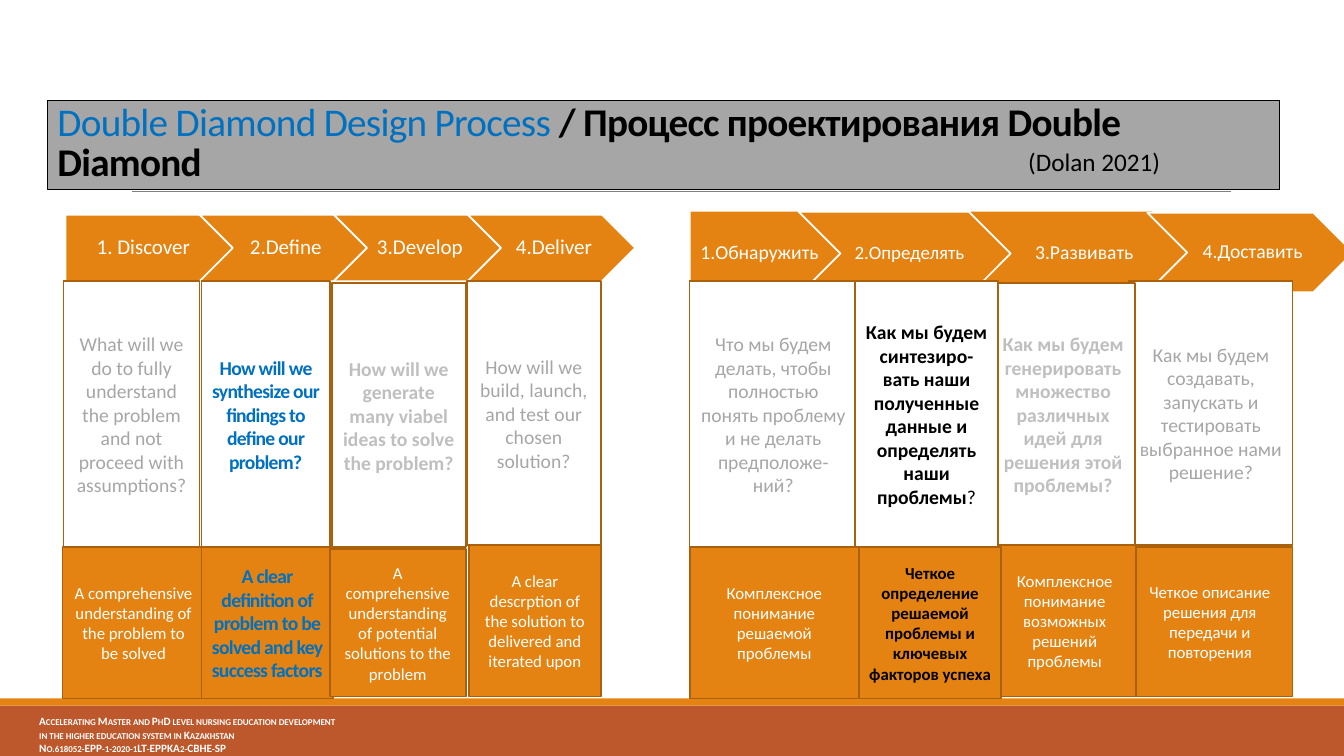
"""Build the bilingual Double Diamond design process slide."""
import dataclasses

import lxml.etree
import pptx
import pptx.dml.color
import pptx.enum.shapes
import pptx.enum.text
import pptx.oxml.ns
import pptx.util


@dataclasses.dataclass(frozen=True)
class Theme:
    font: str = "Calibri"
    orange: str = "E48312"
    brown: str = "A9610D"
    rust: str = "BD582C"
    blue: str = "0070C0"
    black: str = "000000"
    white: str = "FFFFFF"
    rule: str = "808080"
    grey: str = "A6A6A6"
    pale: str = "BFBFBF"
    title: float = 28
    source: float = 18
    step: float = 15
    body: float = 14
    tight: float = 13.5
    outcome: float = 12
    footer: float = 8


theme = Theme()
rgb = pptx.dml.color.RGBColor.from_string
forms = pptx.enum.shapes.MSO_SHAPE
align = pptx.enum.text.PP_ALIGN
anchor = pptx.enum.text.MSO_ANCHOR
cell = pptx.util.Inches(0.1)

deck = pptx.Presentation()
deck.slide_width = pptx.util.Inches(13.33)
deck.slide_height = pptx.util.Inches(7.5)
slide = deck.slides.add_slide(deck.slide_layouts[5])


def write(paragraph, text, size, color, bold=False, spacing=None, caps=None,
          alignment=align.CENTER, leading=None):
    paragraph.alignment = alignment
    paragraph.line_spacing = leading
    run = paragraph.add_run()
    run.text = text
    run.font.name = theme.font
    run.font.size = pptx.util.Pt(size)
    run.font.bold = bold
    run.font.color.rgb = rgb(color)
    for key, value in (("spc", spacing), ("cap", caps)):
        if value:
            run.font._element.set(key, value)


def block(form, column, row, columns, rows, fill, outline=None):
    shape = slide.shapes.add_shape(form, *(int(n * cell) for n in (column, row, columns, rows)))
    shape.shadow.inherit = False
    shape.fill.solid()
    shape.fill.fore_color.rgb = rgb(fill)
    if outline:
        shape.line.color.rgb = rgb(outline)
        shape.line.width = pptx.util.Pt(1.25)
    else:
        shape.line.fill.background()
    shape.text_frame.word_wrap = True
    shape.text_frame.vertical_anchor = anchor.MIDDLE
    return shape


block(forms.RECTANGLE, 0, 70, 133.3, 5, theme.rust)
block(forms.RECTANGLE, 0, 69.3, 133.3, 0.7, theme.orange)

rule = slide.shapes.add_connector(
    pptx.enum.shapes.MSO_CONNECTOR.STRAIGHT, *(int(n * cell) for n in (13.1, 19, 122.1, 19)))
rule.line.color.rgb = rgb(theme.rule)
rule.line.width = pptx.util.Pt(0.5)
lxml.etree.SubElement(rule._element.spPr, pptx.oxml.ns.qn("a:effectLst"))

project = slide.shapes.add_textbox(*(int(n * cell) for n in (2.9, 70.4, 45.9, 4.6))).text_frame
project.word_wrap = True
project_lines = (
    "Accelerating Master and PhD level nursing education development",
    "in the higher education system in Kazakhstan",
    "No.618052-EPP-1-2020-1LT-EPPKA2-CBHE-SP",
)
for number, line in enumerate(project_lines):
    paragraph = project.add_paragraph() if number else project.paragraphs[0]
    write(paragraph, line, theme.footer, theme.white, bold=True, caps="small", alignment=align.LEFT)

heading = slide.shapes.title
heading.left, heading.top, heading.width, heading.height = (
    int(n * cell) for n in (4.7, 10, 122.2, 8.8))
heading.fill.solid()
heading.fill.fore_color.rgb = rgb(theme.grey)
heading.line.color.rgb = rgb(theme.black)
heading.line.width = pptx.util.Pt(1)
heading.text_frame.word_wrap = True
heading.text_frame.auto_size = pptx.enum.text.MSO_AUTO_SIZE.NONE
heading.text_frame.vertical_anchor = anchor.BOTTOM
for text, color, bold in (
    ("Double Diamond Design Process", theme.blue, False),
    (" / Процесс проектирования Double Diamond", theme.black, True),
):
    write(heading.text_frame.paragraphs[0], text, theme.title, color, bold=bold,
          spacing="-50", alignment=align.LEFT, leading=0.85)

source = slide.shapes.add_textbox(*(int(n * cell) for n in (101, 14, 20, 4))).text_frame
source.word_wrap = True
write(source.paragraphs[0], "(Dolan 2021)", theme.source, theme.black, alignment=align.LEFT)

english_steps = ("1. Discover", "2.Define", "3.Develop", "4.Deliver")
steps = [
    (name, 6.5 + 13.3 * number, 21.3, 16.6, 6.6, theme.step)
    for number, name in enumerate(english_steps)
] + [
    ("1.Обнаружить", 68.4, 20.9, 15.5, 8.5, theme.body),
    ("2.Определять", 79.2, 21, 21.5, 8.3, theme.tight),
    ("3.Развивать", 96, 20.9, 22.6, 8.5, theme.body),
    ("4.Доставить", 113.8, 21.1, 20.4, 7.9, theme.body),
]
for number, (name, *place, size) in enumerate(steps):
    form = forms.CHEVRON if number % 4 else forms.PENTAGON
    arrow = block(form, *place, theme.orange, theme.white)
    frame = arrow.text_frame
    frame.margin_left = int(0.7 * cell)
    frame.margin_right = int(0.2 * cell)
    frame.margin_top = frame.margin_bottom = int(0.4 * cell)
    write(frame.paragraphs[0], name, size, theme.white, leading=0.9)

plain = dict(size=theme.body, color=theme.grey)
faded = dict(size=theme.body, color=theme.pale, bold=True)
blue_focus = dict(size=theme.body, color=theme.blue, bold=True, spacing="-50")
black_focus = dict(size=theme.body, color=theme.black, bold=True)
result = dict(size=theme.outcome, color=theme.white)
black_result = dict(size=theme.outcome, color=theme.black, bold=True)

outcomes = [
    ((6.2, 54.3, 14.1, 15), "A comprehensive understanding of the problem to be solved", result),
    ((20, 54.3, 13, 15), "A clear definition of problem to be solved and key success factors",
     blue_focus),
    ((32.7, 54.5, 13.5, 14.6),
     "A comprehensive understanding of potential solutions to the problem", result),
    ((46.5, 54.1, 13.1, 15),
     "A clear descrption of the solution to delivered and iterated upon", result),
    ((68.4, 54.3, 16.8, 15), "Комплексное понимание решаемой проблемы", result),
    ((111.8, 54.3, 16.4, 14.8), "Четкое описание решения для передачи и повторения", result),
    ((98.5, 54.1, 14.2, 15), "Комплексное понимание возможных решений проблемы", result),
    ((85.2, 54.3, 14.1, 15),
     "Четкое определение решаемой проблемы и ключевых факторов успеха", black_result),
]
questions = [
    ((6.3, 27.9, 13.5, 26.4),
     "What will we do to fully understand the problem and not proceed with assumptions?", plain),
    ((20, 27.9, 12.7, 26.4), "How will we synthesize our findings to define our problem?", blue_focus),
    ((32.9, 28.1, 13.3, 26.2), "How will we generate many viabel ideas to solve the problem?", faded),
    ((46.3, 27.9, 13.3, 26.2), "How will we build, launch, and test our chosen solution?", plain),
    ((68.4, 27.9, 16.6, 26.4),
     "Что мы будем делать, чтобы полностью понять проблему и не делать предположе-ний?", plain),
    ((112, 27.9, 16.2, 26.2),
     "Как мы будем создавать, запускать и тестировать выбранное нами решение?", plain),
    ((98.3, 28.1, 14.3, 26),
     "Как мы будем генерировать множество различных идей для решения этой проблемы?", faded),
    ((84.8, 27.9, 14.2, 26.4),
     "Как мы будем синтезиро-вать наши полученные данные и определять наши проблемы",
     black_focus),
]
for fill, cards in ((theme.orange, outcomes), (theme.white, questions)):
    for place, text, style in cards:
        card = block(forms.RECTANGLE, *place, fill, theme.brown)
        write(card.text_frame.paragraphs[0], text, **style)
write(card.text_frame.paragraphs[0], "?", theme.body, theme.black)

deck.save("out.pptx")
